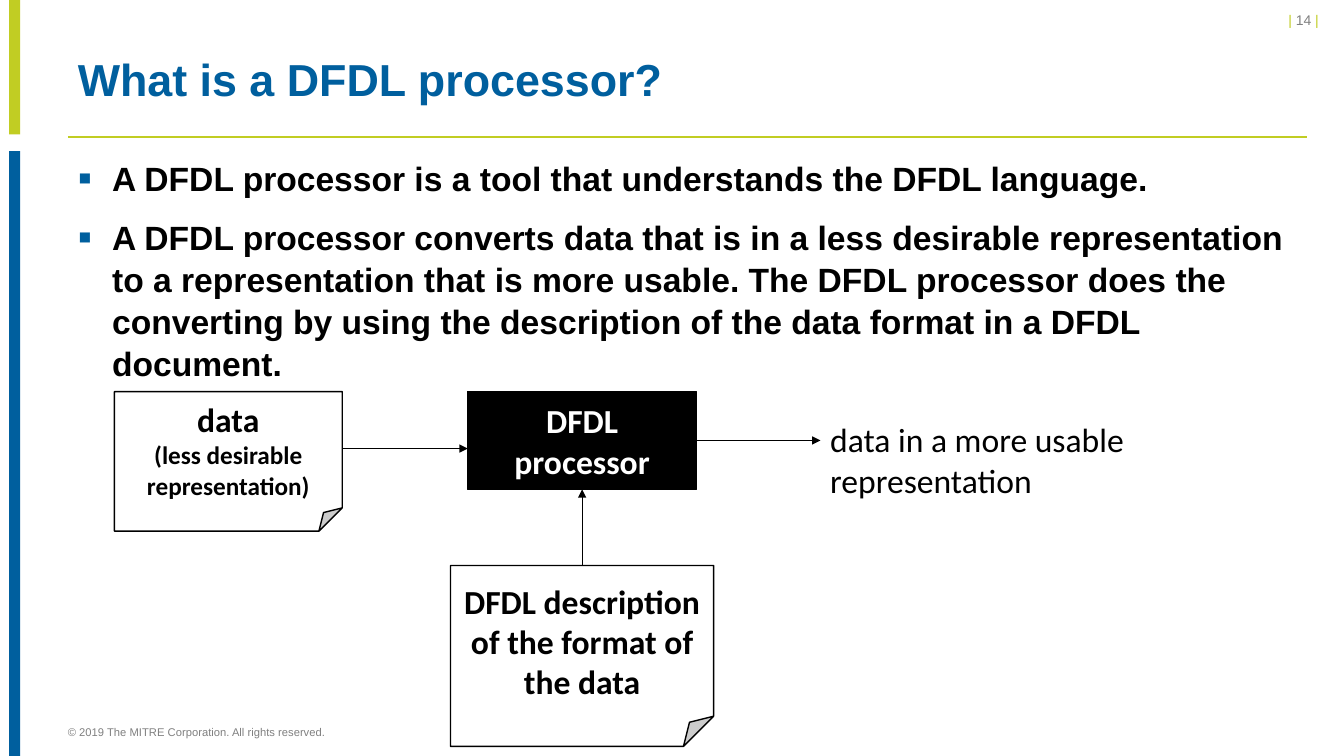
"""Build the slide that explains what a DFDL processor is."""
from lxml.etree import SubElement
from pptx import Presentation
from pptx.dml.color import RGBColor
from pptx.enum.shapes import MSO_CONNECTOR, MSO_SHAPE
from pptx.enum.text import MSO_ANCHOR, PP_ALIGN
from pptx.oxml.ns import qn
from pptx.util import Inches, Pt

LIME, BLUE, GREY, BLACK, WHITE = "C1CD23", "005F9E", "808080", "000000", "FFFFFF"

deck = Presentation()
deck.slide_width, deck.slide_height = Inches(13.33), Inches(7.5)
page = deck.slides.add_slide(deck.slide_layouts[6])
column, row = deck.slide_width / 160, deck.slide_height / 90


def paint(fill, color):
    """Give a fill one solid colour."""
    fill.solid()
    fill.fore_color.rgb = RGBColor.from_string(color)


def write(shape, lines, size, color, face="Calibri", bold=False, align=PP_ALIGN.LEFT, anchor=MSO_ANCHOR.TOP):
    """Write one paragraph per line and format its run."""
    frame = shape.text_frame
    frame.word_wrap, frame.vertical_anchor = True, anchor
    frame.text = "\n".join(lines)
    for para in frame.paragraphs:
        para.alignment = align
        for span in para.runs:
            span.font.name, span.font.size, span.font.bold = face, Pt(size), bold
            paint(span.font.fill, color)
    return frame


shapes = {}
for name, kind, left, top, width, height, fill, outline in [
    ("lime bar", MSO_SHAPE.RECTANGLE, 1.08, 0, 1.32, 16, LIME, None),
    ("blue bar", MSO_SHAPE.RECTANGLE, 1.08, 18, 1.32, 72, BLUE, None),
    ("data", MSO_SHAPE.FOLDED_CORNER, 13.62, 46.62, 27.12, 16.62, WHITE, BLACK),
    ("processor", MSO_SHAPE.RECTANGLE, 55.68, 46.62, 27.24, 11.64, BLACK, BLACK),
    ("format", MSO_SHAPE.FOLDED_CORNER, 53.64, 67.32, 31.32, 21.54, WHITE, BLACK),
]:
    shape = page.shapes.add_shape(
        kind, round(left * column), round(top * row), round(width * column), round(height * row))
    shape.shadow.inherit = False
    paint(shape.fill, fill)
    if outline:
        paint(shape.line.fill, outline)
        shape.line.width = Pt(1)
    else:
        shape.line.fill.background()
    shapes[name] = shape

for name, left, top, width, height in [
    ("page number", 130.56, 0.84, 28.08, 3.24),
    ("title", 8.08, 4.8, 147.48, 9.84),
    ("body", 8.08, 18, 147.48, 27),
    ("copyright", 8.08, 85.56, 98.88, 3.12),
    ("result", 97.65, 49.32, 37.44, 10.92),
]:
    shapes[name] = page.shapes.add_textbox(
        round(left * column), round(top * row), round(width * column), round(height * row))

connectors = {}
for name, left, top, right, bottom, color, weight in [
    ("title rule", 8.08, 16.32, 155.56, 16.32, LIME, 1),
    ("data arrow", 40.74, 53.4, 55.68, 53.4, BLACK, 0.5),
    ("result arrow", 82.92, 52.44, 97.68, 52.44, BLACK, 0.5),
    ("format arrow", 69.3, 67.32, 69.3, 58.26, BLACK, 0.5),
]:
    connector = page.shapes.add_connector(
        MSO_CONNECTOR.STRAIGHT, round(left * column), round(top * row), round(right * column), round(bottom * row))
    paint(connector.line.fill, color)
    connector.line.width = Pt(weight)
    if name.endswith("arrow"):
        SubElement(connector.line._get_or_add_ln(), qn("a:tailEnd"), type="triangle")
    SubElement(connector._element.spPr, qn("a:effectLst"))
    connectors[name] = connector
connectors["result arrow"].begin_connect(shapes["processor"], 3)
connectors["format arrow"].begin_connect(shapes["format"], 0)
connectors["format arrow"].end_connect(shapes["processor"], 2)

number = write(shapes["page number"], ["| "], 10, LIME, "Arial", align=PP_ALIGN.RIGHT).paragraphs[0]
for text, color in [("14 ", GREY), ("| ", LIME)]:
    span = number.add_run()
    span.text, span.font.name, span.font.size = text, "Arial", Pt(10)
    paint(span.font.fill, color)

title = write(shapes["title"], ["What is a DFDL processor?"], 32, BLUE, "Arial", True, anchor=MSO_ANCHOR.MIDDLE)
title.paragraphs[0].line_spacing = 0.9

body = write(shapes["body"], [
    "A DFDL processor is a tool that understands the DFDL language.",
    "A DFDL processor converts data that is in a less desirable representation to a representation that is "
    "more usable. The DFDL processor does the converting by using the description of the data format in a "
    "DFDL document.",
], 24, BLACK, "Arial", True)
for para in body.paragraphs:
    para.line_spacing, para.space_after = Pt(30), Pt(12)
    properties = para._p.get_or_add_pPr()
    properties.set("marL", str(Inches(0.34)))
    properties.set("indent", str(-Inches(0.34)))
    SubElement(SubElement(properties, qn("a:buClr")), qn("a:srgbClr"), val=BLUE)
    SubElement(properties, qn("a:buSzPct"), val="120000")
    SubElement(properties, qn("a:buFont"), typeface="Arial")
    SubElement(properties, qn("a:buChar"), char="▪")

rights = write(shapes["copyright"], ["© 2019 The MITRE Corporation. All rights reserved."], 8, GREY, "Arial",
               anchor=MSO_ANCHOR.MIDDLE)
rights.margin_left = rights.margin_right = rights.margin_top = rights.margin_bottom = 0

for name, lines, color in [
    ("data", ["data", "(less desirable representation)"], BLACK),
    ("processor", ["DFDL", "processor"], WHITE),
    ("format", ["DFDL description of the format of the data"], BLACK),
]:
    write(shapes[name], lines, 24, color, bold=True, align=PP_ALIGN.CENTER, anchor=MSO_ANCHOR.MIDDLE)
shapes["data"].text_frame.paragraphs[1].runs[0].font.size = Pt(18)
write(shapes["result"], ["data in a more usable representation"], 24, BLACK)

deck.save("out.pptx")
